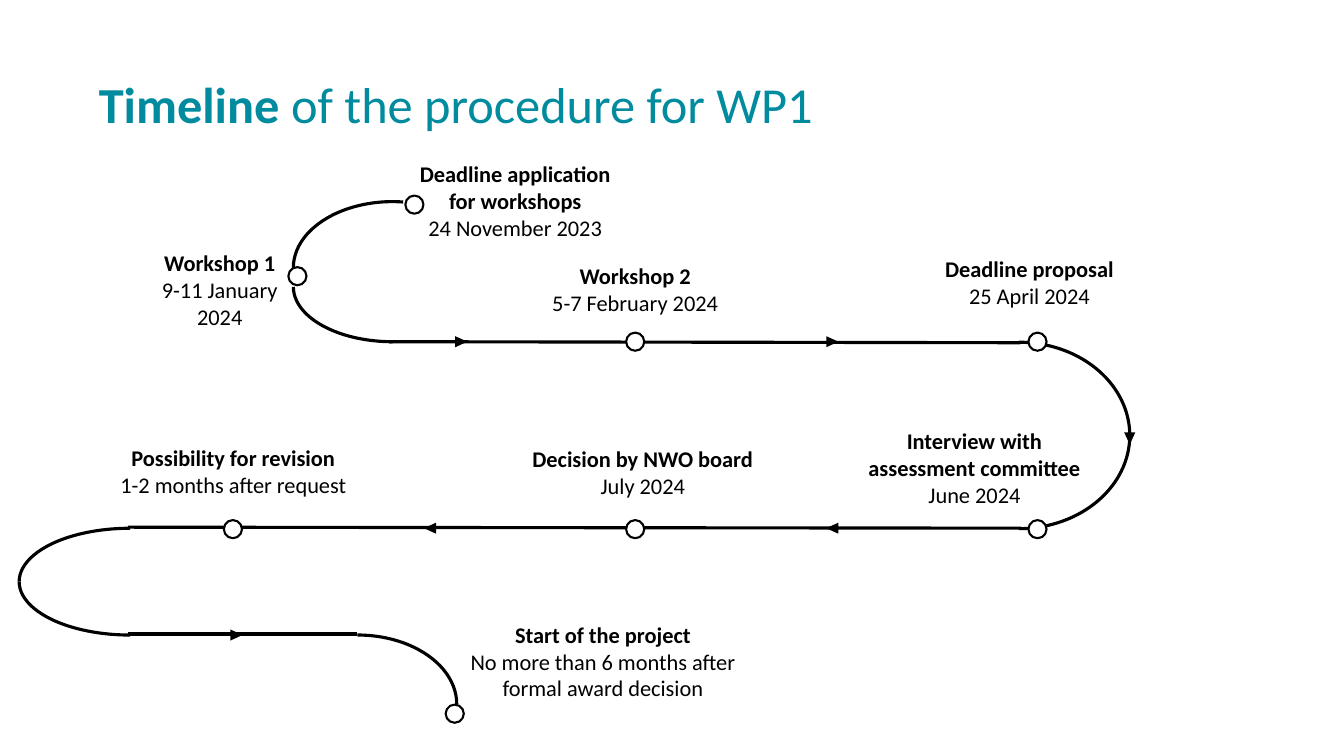
import pptx
import pptx.util
import pptx.dml.color
import pptx.enum.shapes
import pptx.enum.text
import pptx.oxml.ns
import lxml.etree

Inches = pptx.util.Inches
Pt = pptx.util.Pt
Shape = pptx.enum.shapes.MSO_SHAPE
Align = pptx.enum.text.PP_ALIGN

TEAL = pptx.dml.color.RGBColor(0x00, 0x8B, 0x9F)
BLACK = pptx.dml.color.RGBColor(0x00, 0x00, 0x00)
WHITE = pptx.dml.color.RGBColor(0xFF, 0xFF, 0xFF)
FONT = "Calibri"
DOT = 0.18
UPPER_LEFT = (180, 270)
UPPER_RIGHT = (270, 0)

# left, top, width, height, turn, start and end angle before the turn
BENDS = [
    (9.18, 3.22, 1.85, 2.2, 90, UPPER_LEFT),
    (9.18, 3.22, 1.85, 2.2, 90, UPPER_RIGHT),
    (3.35, 1.86, 1.09, 1.97, 270, UPPER_LEFT),
    (0.76, 4.67, 1.06, 2.2, 270, UPPER_LEFT),
    (0.76, 4.67, 1.06, 2.2, 270, UPPER_RIGHT),
    (2.86, 6, 1.37, 1.97, 90, UPPER_LEFT),
    (3.24, 1.67, 1.31, 1.97, 270, (270, 9.1)),
]
TRACKS = [
    (10.12, 3.4, 3.86, 3.39),
    (10.13, 5.24, 1.27, 5.23),
    (3.54, 6.29, 1.27, 6.29),
]
DOTS = [
    (4.02, 1.94), (2.86, 2.65), (6.21, 3.3), (10.2, 3.3),
    (10.2, 5.16), (6.21, 5.16), (2.22, 5.16), (4.42, 6.99),
]
ARROWS = [
    (4.52, 3.33, 90), (8.2, 3.33, 90), (11.15, 4.29, 180),
    (8.2, 5.18, 270), (4.21, 5.18, 270), (2.29, 6.24, 90),
]
# left, top, width, event, date
LABELS = [
    (4.12, 1.59, 1.98, "Deadline application for workshops", "24 November 2023"),
    (1.48, 2.47, 1.4, "Workshop 1", "9-11 January 2024"),
    (5.3, 2.6, 2, "Workshop 2", "5-7 February 2024"),
    (9.22, 2.53, 1.98, "Deadline proposal", "25 April 2024"),
    (8.61, 4.24, 2.11, "Interview with assessment committee", "June 2024"),
    (5.23, 4.42, 2.29, "Decision by NWO board", "July 2024"),
    (1.18, 4.41, 2.27, "Possibility for revision", "1-2 months after request"),
    (4.62, 6.16, 2.72, "Start of the project",
     "No more than 6 months after formal award decision"),
]


def add_shape(slide, kind, left, top, width, height, turn=0):
    shape = slide.shapes.add_shape(
        kind, Inches(left), Inches(top), Inches(width), Inches(height))
    shape.rotation = turn
    shape.shadow.inherit = False
    return shape


def set_line(shape, width):
    shape.line.color.rgb = BLACK
    shape.line.width = Pt(width)


def set_fill(shape, color):
    shape.fill.solid()
    shape.fill.fore_color.rgb = color


def add_bend(slide, left, top, width, height, turn, angles):
    bend = add_shape(slide, Shape.ARC, left, top, width, height, turn)
    for index, angle in enumerate(angles):
        bend.adjustments[index] = angle * 0.6  # 60000 units a degree, over 100000
    bend.fill.background()
    set_line(bend, 2.25)


def add_track(slide, *ends):
    track = slide.shapes.add_connector(
        pptx.enum.shapes.MSO_CONNECTOR.STRAIGHT, *map(Inches, ends))
    set_line(track, 2.25)
    lxml.etree.SubElement(
        track._element.spPr, pptx.oxml.ns.qn("a:effectLst"))


def add_dot(slide, left, top):
    dot = add_shape(slide, Shape.OVAL, left, top, DOT, DOT)
    set_fill(dot, WHITE)
    set_line(dot, 1.5)


def add_arrow(slide, left, top, turn):
    arrow = add_shape(
        slide, Shape.ISOSCELES_TRIANGLE, left, top, 0.11, 0.12, turn)
    set_fill(arrow, BLACK)
    arrow.line.fill.background()


def add_frame(slide, left, top, width, height):
    """Add a wrapping text box without margins and return its text frame."""
    box = slide.shapes.add_textbox(
        Inches(left), Inches(top), Inches(width), Inches(height))
    frame = box.text_frame
    frame.word_wrap = True
    frame.margin_left = frame.margin_right = 0
    frame.margin_top = frame.margin_bottom = 0
    return frame


def set_font(font, size, color):
    font.name = FONT
    font.size = Pt(size)
    font.color.rgb = color


def add_title(slide):
    para = add_frame(slide, 0.98, 0.79, 10.24, 0.59).paragraphs[0]
    para.line_spacing = 0.9
    set_font(para.font, 36, TEAL)
    for text, bold in (("Timeline ", True), ("of the procedure for WP1", False)):
        run = para.add_run()
        run.text = text
        run.font.bold = bold
        set_font(run.font, 36, TEAL)


def add_label(slide, left, top, width, event, date):
    frame = add_frame(slide, left, top, width, 0.6)
    frame.text = f"{event}\n{date}"
    for para, bold in zip(frame.paragraphs, (True, False)):
        para.alignment = Align.CENTER
        para.font.bold = bold
        set_font(para.font, 16, BLACK)


def main():
    deck = pptx.Presentation()
    deck.slide_width = Inches(13.33)
    deck.slide_height = Inches(7.5)
    slide = deck.slides.add_slide(deck.slide_layouts[6])
    add_title(slide)
    layers = (
        (add_bend, BENDS), (add_track, TRACKS), (add_dot, DOTS),
        (add_arrow, ARROWS), (add_label, LABELS),
    )
    for draw, items in layers:
        for item in items:
            draw(slide, *item)
    deck.save("out.pptx")


if __name__ == "__main__":
    main()
